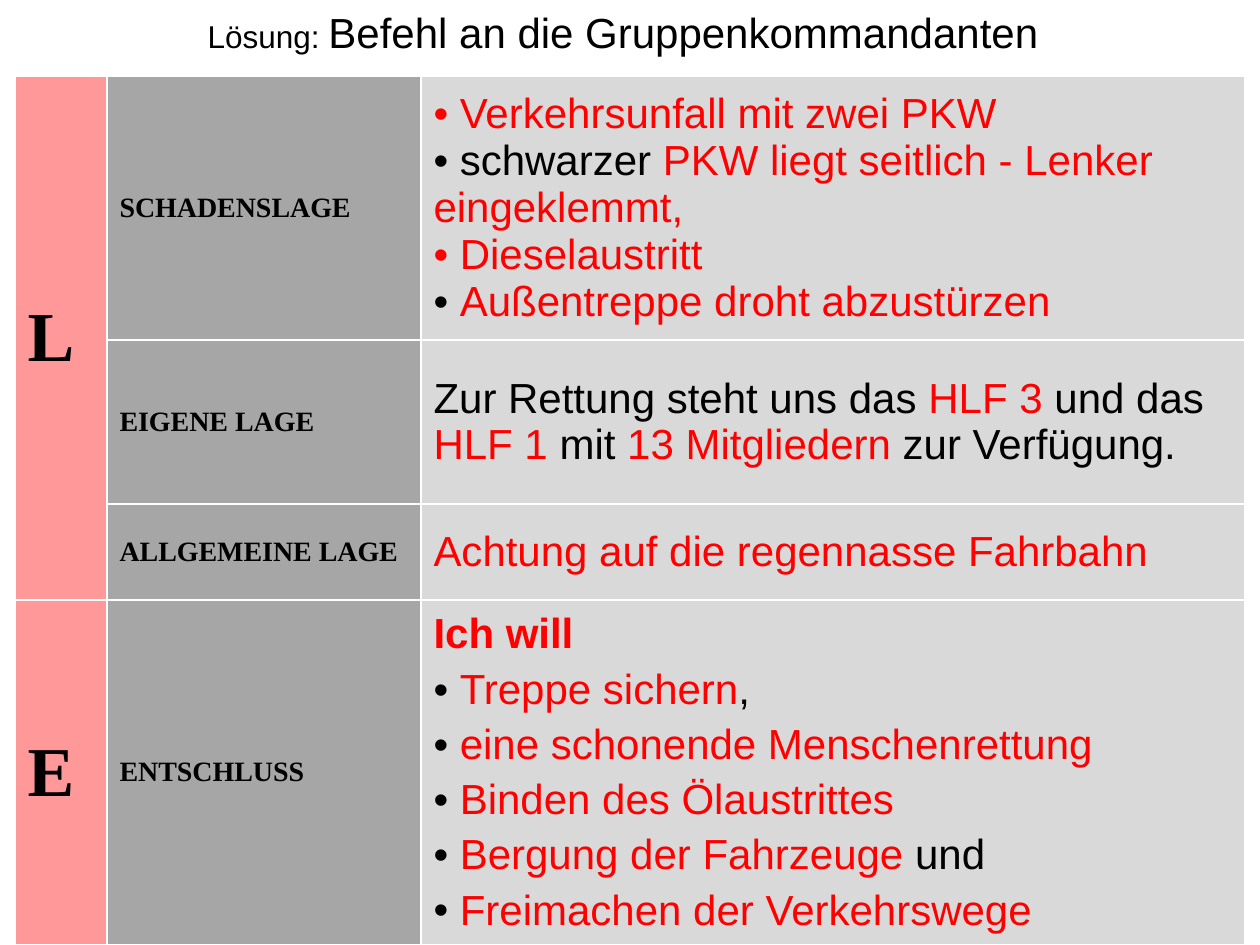
from dataclasses import dataclass

from lxml.etree import SubElement
from pptx import Presentation
from pptx.dml.color import RGBColor
from pptx.enum.text import MSO_ANCHOR, PP_ALIGN
from pptx.oxml import parse_xml
from pptx.oxml.ns import nsdecls, qn
from pptx.util import Pt

BLACK = RGBColor(0x00, 0x00, 0x00)
RED = RGBColor(0xFF, 0x00, 0x00)
PINK = RGBColor(0xFF, 0x99, 0x99)
MID_GRAY = RGBColor(0xA6, 0xA6, 0xA6)
LIGHT_GRAY = RGBColor(0xD9, 0xD9, 0xD9)
WHITE = RGBColor(0xFF, 0xFF, 0xFF)
SANS, SERIF = "Arial", "Times New Roman"
COLS = (92, 314, 824)


def px(n: int) -> int:
    """Turn pixels at 126 to the inch into EMU."""
    return round(n * 914400 / 126)


@dataclass
class Run:
    text: str
    color: RGBColor = RED
    size: int = 24
    font: str = SANS
    bold: bool = False


@dataclass
class Para:
    runs: list[Run]
    bullet: bool = False
    before: float = 0


@dataclass
class Row:
    label: str
    height: int
    paras: list[Para]
    letter: str = ""


def heading(text: str, size: int) -> list[Para]:
    return [Para([Run(text, BLACK, size, SERIF, True)])]


def item(*runs: Run, before: float = 0) -> Para:
    return Para(list(runs), True, before)


GAP = 4.8
SPACE = Run(" ", BLACK)
ROWS = [
    Row("SCHADENSLAGE", 264, [
        item(Run(" Verkehrsunfall mit zwei PKW")),
        item(Run(" schwarzer ", BLACK), Run("PKW liegt seitlich - Lenker eingeklemmt,")),
        item(Run(" Dieselaustritt")),
        item(SPACE, Run("Außentreppe droht abzustürzen")),
    ], "L"),
    Row("EIGENE LAGE", 164, [Para([
        Run("Zur Rettung steht uns das", BLACK), Run(" HLF 3 "),
        Run("und das", BLACK), Run(" HLF 1 "), Run("mit", BLACK),
        Run(" 13 Mitgliedern "), Run("zur Verfügung.", BLACK),
    ], before=GAP)]),
    Row("ALLGEMEINE LAGE", 96, [
        Para([Run("Achtung auf die regennasse Fahrbahn")], before=GAP),
    ]),
    Row("ENTSCHLUSS", 345, [
        Para([Run("Ich will", bold=True)], before=GAP),
        item(SPACE, Run("Treppe sichern"), Run(",", BLACK), before=GAP),
        item(SPACE, Run("eine schonende Menschenrettung"), before=GAP),
        item(SPACE, Run("Binden des Ölaustrittes"), before=GAP),
        item(SPACE, Run("Bergung der Fahrzeuge "), Run("und", BLACK), before=GAP),
        item(SPACE, Run("Freimachen der Verkehrswege"), before=GAP),
    ], "E"),
]


def add_runs(p, runs: list[Run]) -> None:
    for run in runs:
        r = p.add_run()
        r.text = run.text
        r.font.name, r.font.size, r.font.bold = run.font, Pt(run.size), run.bold
        r.font.color.rgb = run.color


def add_bullet(p) -> None:
    pPr = p._p.get_or_add_pPr()
    pPr.set("marL", "0")
    pPr.set("indent", "0")
    SubElement(pPr, qn("a:buFont")).set("typeface", SANS)
    SubElement(pPr, qn("a:buChar")).set("char", "•")


def fill_cell(cell, paras: list[Para], fill: RGBColor) -> None:
    cell.fill.solid()
    cell.fill.fore_color.rgb = fill
    cell.vertical_anchor = MSO_ANCHOR.MIDDLE
    tcPr = cell._tc.get_or_add_tcPr()
    for i, side in enumerate("LRTB"):
        tcPr.insert(i, parse_xml(
            f'<a:ln{side} {nsdecls("a")} w="12700"><a:solidFill>'
            f'<a:srgbClr val="{WHITE}"/></a:solidFill></a:ln{side}>'))
    tf = cell.text_frame
    for i, para in enumerate(paras):
        p = tf.add_paragraph() if i else tf.paragraphs[0]
        p.space_before = Pt(para.before)
        if para.bullet:
            add_bullet(p)
        add_runs(p, para.runs)


def add_title(s) -> None:
    sp = s.shapes.title
    sp.left, sp.top, sp.width, sp.height = px(15), 0, px(1216), px(63)
    tf = sp.text_frame
    tf.word_wrap = True
    tf.vertical_anchor = MSO_ANCHOR.MIDDLE
    p = tf.paragraphs[0]
    p.alignment = PP_ALIGN.CENTER
    add_runs(p, [Run("Lösung: ", BLACK, 18),
                 Run("Befehl an die Gruppenkommandanten", BLACK)])


def add_order_table(s) -> None:
    height = sum(row.height for row in ROWS)
    table = s.shapes.add_table(len(ROWS), len(COLS), px(15), px(76),
                               px(sum(COLS)), px(height)).table
    table.first_row = table.horz_banding = False
    for col, width in zip(table.columns, COLS):
        col.width = px(width)
    for i, row in enumerate(ROWS):
        table.rows[i].height = px(row.height)
        letter = heading(row.letter, 40) if row.letter else []
        fill_cell(table.cell(i, 0), letter, PINK)
        fill_cell(table.cell(i, 1), heading(row.label, 16), MID_GRAY)
        fill_cell(table.cell(i, 2), row.paras, LIGHT_GRAY)
    table.cell(0, 0).merge(table.cell(2, 0))


def main() -> None:
    prs = Presentation()
    prs.slide_width, prs.slide_height = px(1260), px(945)
    s = prs.slides.add_slide(prs.slide_layouts[5])
    add_title(s)
    add_order_table(s)
    prs.save("out.pptx")


if __name__ == "__main__":
    main()
